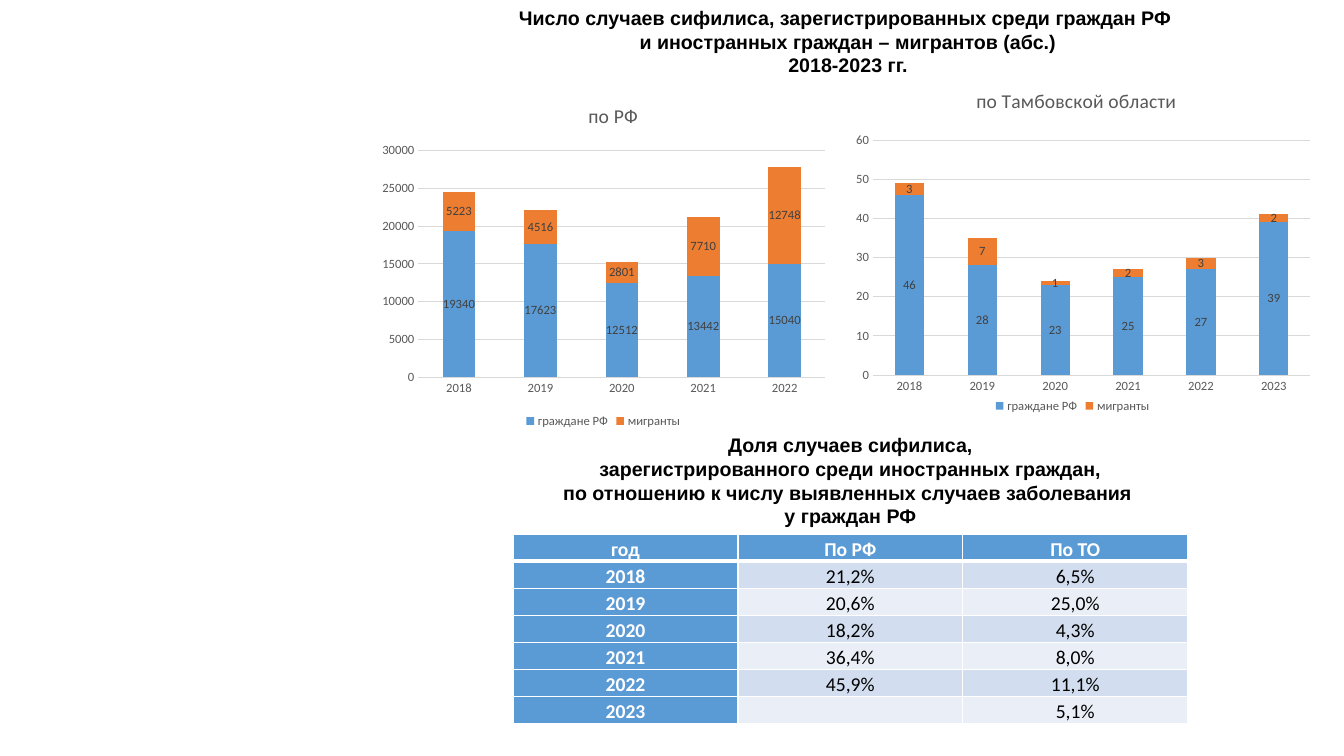
from lxml import etree
from pptx import Presentation
from pptx.chart.data import CategoryChartData
from pptx.dml.color import RGBColor
from pptx.enum.chart import XL_CHART_TYPE, XL_LEGEND_POSITION, XL_TICK_MARK
from pptx.enum.text import MSO_ANCHOR, PP_ALIGN
from pptx.oxml.ns import qn
from pptx.util import Inches, Pt

COLORS = {
    "white": "FFFFFF", "black": "000000", "citizens": "5B9BD5",
    "migrants": "ED7D31", "axis": "595959", "label": "404040",
    "grid": "D9D9D9", "band_dark": "D2DEEF", "band_light": "EAEFF7",
}
SLIDE_WIDTH, SLIDE_HEIGHT = Inches(13.33), Inches(7.5)

# Boxes are left, top, width, height in percent of the slide
CASES_HEADING_BOX = (30.76, 0.13, 64.67, 14.8)
RUSSIA_BOX = (27.68, 11.73, 34.43, 45.47)
REGION_BOX = (62.12, 8.8, 35.41, 46.4)
SHARE_HEADING_BOX = (33.83, 56.67, 58.89, 13.87)
SHARE_TABLE_BOX = (38.18, 70.67, 50.19, 25.07)

CASES_HEADING = [
    "Число случаев сифилиса, зарегистрированных среди граждан РФ ",
    "и иностранных граждан – мигрантов (абс.)",
    "2018-2023 гг.",
]
SHARE_HEADING = [
    "Доля случаев сифилиса,",
    "зарегистрированного среди иностранных граждан,",
    "по отношению к числу выявленных случаев заболевания ",
    "у граждан РФ",
]
YEARS = ["2018", "2019", "2020", "2021", "2022", "2023"]
RUSSIA_CASES = {
    "граждане РФ": [19340, 17623, 12512, 13442, 15040],
    "мигранты": [5223, 4516, 2801, 7710, 12748],
}
REGION_CASES = {
    "граждане РФ": [46, 28, 23, 25, 27, 39],
    "мигранты": [3, 7, 1, 2, 3, 2],
}
SHARE_ROWS = [
    ("год", "По РФ", "По ТО"),
    ("2018", "21,2%", "6,5%"),
    ("2019", "20,6%", "25,0%"),
    ("2020", "18,2%", "4,3%"),
    ("2021", "36,4%", "8,0%"),
    ("2022", "45,9%", "11,1%"),
    ("2023", "", "5,1%"),
]


def rgb(name):
    return RGBColor.from_string(COLORS[name])


def place(box):
    """Turn percent of the slide into lengths."""
    sides = (SLIDE_WIDTH, SLIDE_HEIGHT) * 2
    return [round(side * share / 100) for side, share in zip(sides, box)]


def style_font(font, size, color, name="Calibri", bold=False):
    font.size = Pt(size)
    font.name = name
    font.bold = bold
    font.color.rgb = rgb(color)


def add_heading(slide, box, lines):
    frame = slide.shapes.add_textbox(*place(box)).text_frame
    frame.word_wrap = True
    frame.vertical_anchor = MSO_ANCHOR.TOP
    for number, line in enumerate(lines):
        paragraph = frame.add_paragraph() if number else frame.paragraphs[0]
        paragraph.alignment = PP_ALIGN.CENTER
        run = paragraph.add_run()
        run.text = line
        style_font(run.font, 14, "black", "Arial", True)


def set_layout(parent, index, **values):
    """Fix the place of a chart part, in shares of the chart."""
    for old in parent.findall(qn("c:layout")):
        parent.remove(old)
    layout = etree.Element(qn("c:layout"))
    manual = etree.SubElement(layout, qn("c:manualLayout"))
    for tag, value in values.items():
        etree.SubElement(manual, qn(f"c:{tag}")).set("val", str(value))
    parent.insert(index, layout)


def style_axis(axis):
    axis.major_tick_mark = axis.minor_tick_mark = XL_TICK_MARK.NONE
    axis.format.line.fill.background()
    style_font(axis.tick_labels.font, 9, "axis")


def add_cases_chart(slide, box, title, cases, top_value, title_at, plot):
    values_by_group = list(cases.values())
    data = CategoryChartData()
    data.categories = YEARS[:len(values_by_group[0])]
    for group, values in cases.items():
        data.add_series(group, values)
    chart = slide.shapes.add_chart(
        XL_CHART_TYPE.COLUMN_STACKED, *place(box), data).chart
    style_font(chart.font, 10, "black")

    chart.has_title = True
    run = chart.chart_title.text_frame.paragraphs[0].add_run()
    run.text = title
    style_font(run.font, 14, "axis")
    set_layout(chart.chart_title._element, 1, xMode="edge", yMode="edge",
               x=title_at[0], y=title_at[1])
    left, top, width, height = plot
    set_layout(chart._chartSpace.chart.plotArea, 0, layoutTarget="inner",
               xMode="edge", yMode="edge", x=left, y=top, w=width, h=height)

    chart.has_legend = True
    chart.legend.position = XL_LEGEND_POSITION.BOTTOM
    chart.legend.include_in_layout = False
    style_font(chart.legend.font, 9, "axis")

    style_axis(chart.category_axis)
    style_axis(chart.value_axis)
    chart.value_axis.minimum_scale = 0
    chart.value_axis.maximum_scale = top_value
    chart.value_axis.major_unit = top_value / 6
    gridline = chart.value_axis.major_gridlines.format.line
    gridline.color.rgb = rgb("grid")
    gridline.width = Pt(0.75)

    columns = chart.plots[0]
    columns.gap_width, columns.overlap = 150, 100
    columns.vary_by_categories = False
    for series, color in zip(columns.series, ("citizens", "migrants")):
        series.format.fill.solid()
        series.format.fill.fore_color.rgb = rgb(color)
        series.data_labels.show_value = True
        style_font(series.data_labels.font, 9, "label")


def add_borders(cell, bottom_width):
    properties = cell._tc.get_or_add_tcPr()
    widths = {"lnL": 1, "lnR": 1, "lnT": 1, "lnB": bottom_width}
    for index, (side, width) in enumerate(widths.items()):
        line = etree.Element(qn(f"a:{side}"), w=str(Pt(width)))
        fill = etree.SubElement(line, qn("a:solidFill"))
        etree.SubElement(fill, qn("a:srgbClr"), val=COLORS["white"])
        properties.insert(index, line)


def fill_cell(cell, text, color, is_head, bottom_width):
    cell.fill.solid()
    cell.fill.fore_color.rgb = rgb(color)
    cell.margin_left = cell.margin_right = Inches(0.07)
    cell.margin_top = cell.margin_bottom = 0
    add_borders(cell, bottom_width)
    paragraph = cell.text_frame.paragraphs[0]
    paragraph.alignment = PP_ALIGN.CENTER
    if text:
        paragraph.line_spacing = 1.15
        run = paragraph.add_run()
        run.text = text
        style_font(run.font, 14, "white" if is_head else "black", bold=is_head)
    else:
        etree.SubElement(paragraph._p, qn("a:endParaRPr"), sz="1400")


def add_share_table(slide, box, rows):
    left, top, width, height = place(box)
    table = slide.shapes.add_table(
        len(rows), len(rows[0]), left, top, width, height).table
    for row in table.rows:
        row.height = height // len(rows)
    for r, texts in enumerate(rows):
        for c, text in enumerate(texts):
            is_head = r == 0 or c == 0
            band = "band_dark" if r % 2 else "band_light"
            fill_cell(table.cell(r, c), text, "citizens" if is_head else band,
                      is_head, 1 if r else 3)


def main():
    deck = Presentation()
    deck.slide_width, deck.slide_height = SLIDE_WIDTH, SLIDE_HEIGHT
    slide = deck.slides.add_slide(deck.slide_layouts[6])
    add_heading(slide, CASES_HEADING_BOX, CASES_HEADING)
    add_cases_chart(slide, RUSSIA_BOX, "по РФ", RUSSIA_CASES, 30000,
                    (0.46, 0.03), (0.1, 0.18, 0.88, 0.66))
    add_cases_chart(slide, REGION_BOX, "по Тамбовской области", REGION_CASES,
                    60, (0.29, 0.05), (0.08, 0.21, 0.92, 0.67))
    add_share_table(slide, SHARE_TABLE_BOX, SHARE_ROWS)
    add_heading(slide, SHARE_HEADING_BOX, SHARE_HEADING)
    deck.save("out.pptx")


if __name__ == "__main__":
    main()
